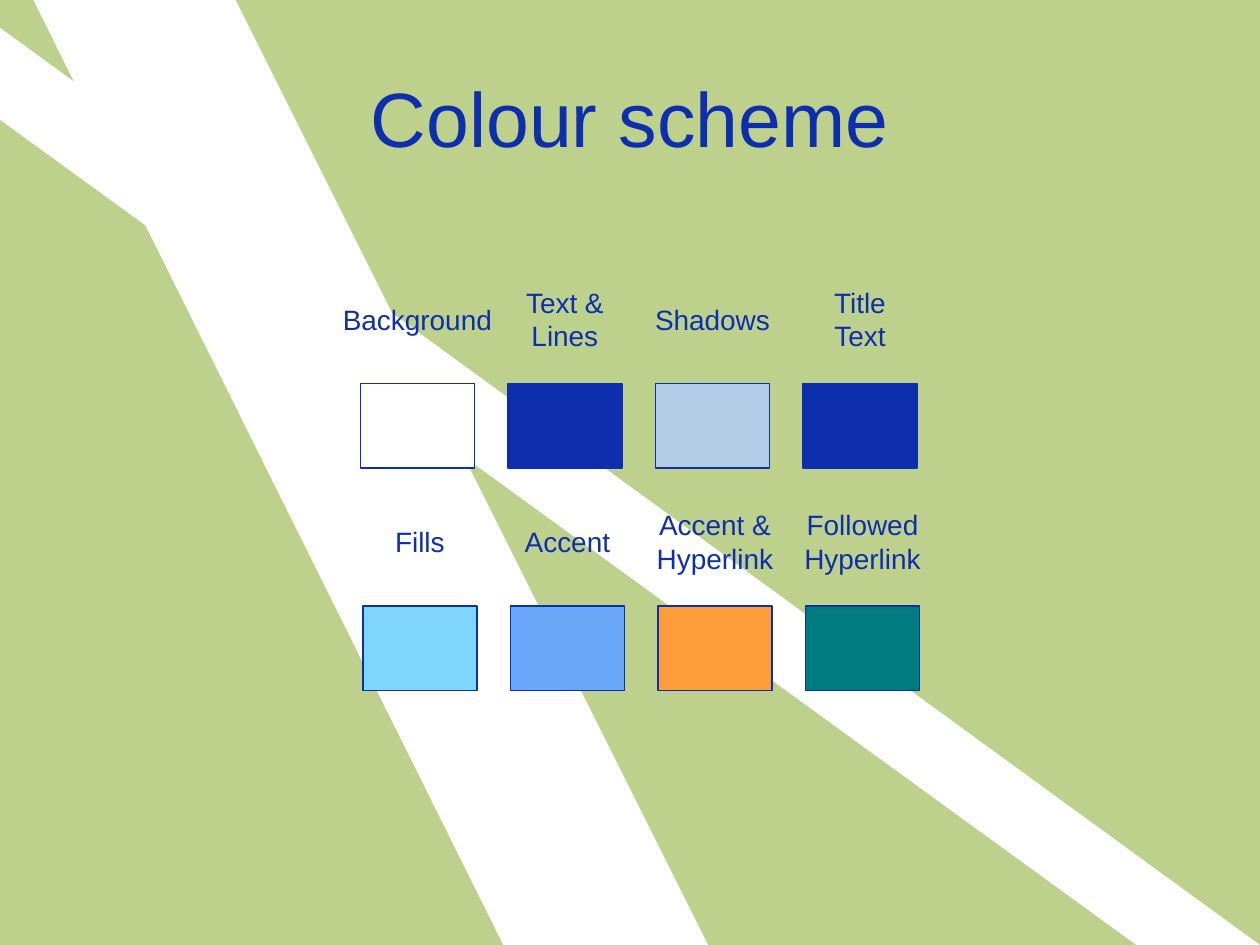
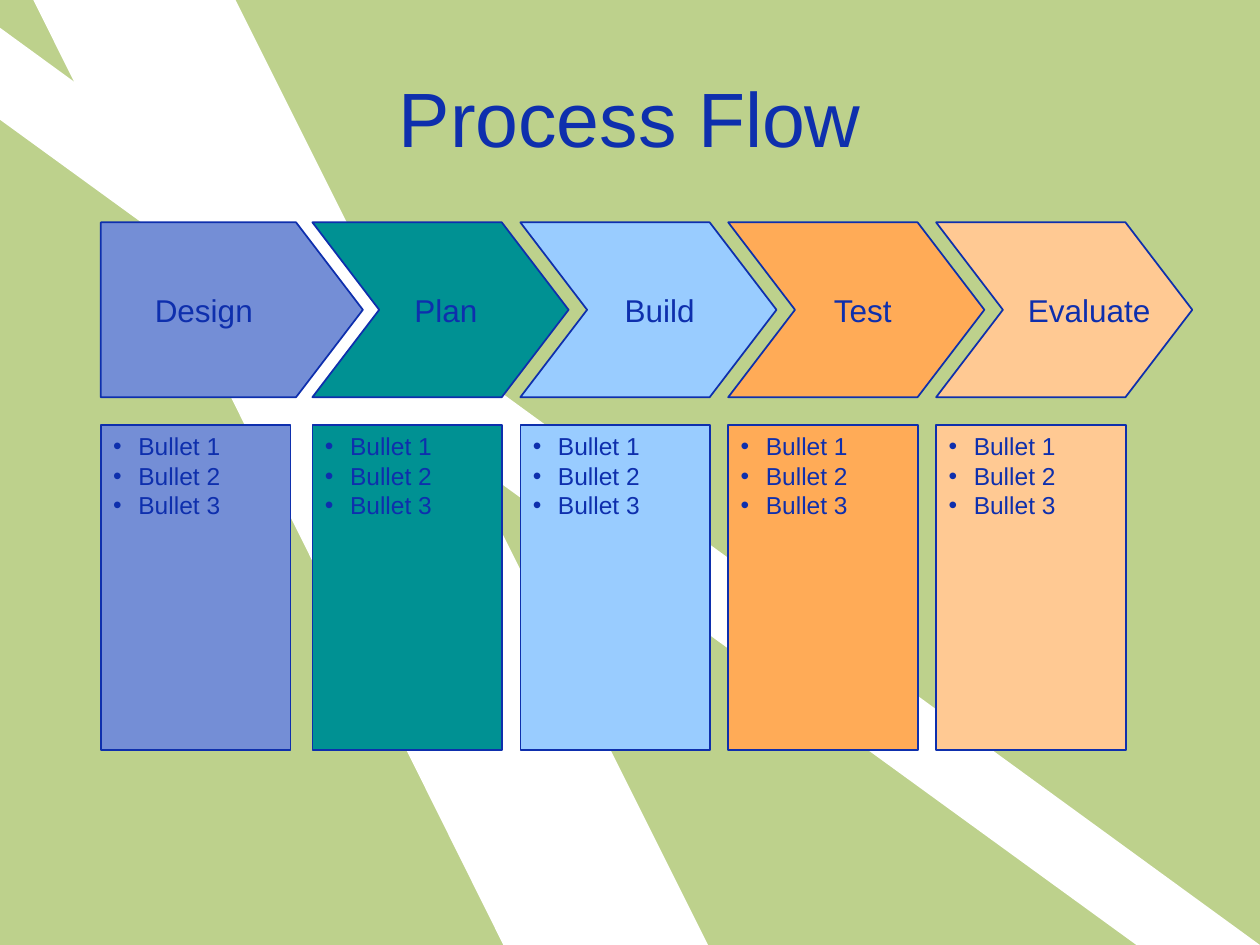
from dataclasses import dataclass
from typing import NamedTuple

from lxml.etree import SubElement
from pptx import Presentation
from pptx.dml.color import RGBColor
from pptx.enum.shapes import MSO_SHAPE as Preset
from pptx.enum.text import MSO_ANCHOR as Anchor, MSO_AUTO_SIZE as AutoSize, PP_ALIGN as Align
from pptx.oxml.ns import qn
from pptx.util import Inches, Pt

SLIDE_WIDTH, SLIDE_HEIGHT = Inches(10), Inches(7.5)
COLUMNS, ROWS = 100, 75
FONT = "Arial"
COLOURS = {
    "meadow": "BDD18C",
    "white": "FFFFFF",
    "ink": "0E2FAD",
    "shadow": "B3CCE6",
    "sky": "7FD7FC",
    "azure": "6BA7F8",
    "orange": "FF9D3B",
    "teal": "007B7E",
    "design": "748ED6",
    "plan": "009193",
    "build": "99CCFF",
    "test": "FFAB57",
    "evaluate": "FFC993",
}


class Box(NamedTuple):
    left: float
    top: float
    width: float
    height: float


class Swatch(NamedTuple):
    label: str
    colour: str
    label_width: float


@dataclass(frozen=True)
class Stage:
    label: str
    colour: str
    label_left: float
    label_width: float


TITLE_BOX = Box(5, 3, 90, 12.5)
BANDS = (
    ((2.65, 0), (18.7, 0), (56.2, 75), (39.95, 75)),
    ((0, 9.5), (0, 2.2), (100, 75), (90.2, 75)),
)

SWATCH_ROWS = (
    (28.6, 30.45, (
        Swatch("Background", "white", 14.1),
        Swatch("Text &\nLines", "ink", 8.6),
        Swatch("Shadows", "shadow", 11.4),
        Swatch("Title\vText", "ink", 6.5),
    )),
    (28.8, 48.1, (
        Swatch("Fills", "sky", 6.4),
        Swatch("Accent", "azure", 9.1),
        Swatch("Accent &\nHyperlink", "orange", 11.7),
        Swatch("Followed\nHyperlink", "teal", 11.7),
    )),
)
SWATCH_STEP, SWATCH_WIDTH, SWATCH_HEIGHT = 11.71, 9.05, 6.7
LABEL_RISE = 5.1

STAGES = (
    Stage("Design", "design", 11.3, 9.8),
    Stage("Plan", "plan", 31.9, 7),
    Stage("Build", "build", 48.6, 7.6),
    Stage("Test", "test", 65.2, 6.9),
    Stage("Evaluate", "evaluate", 80.6, 11.7),
)
STAGE_LEFT, STAGE_STEP, STAGE_WIDTH = 8.3, 16.5, 15.05
FIRST_STAGE_EXTRA = 0.3
ARROW_TOP, ARROW_HEIGHT, ARROW_POINT = 17.65, 13.88, 5.3
FIRST_ARROW_BODY, ARROW_BODY = 15.5, 15.03
DETAIL_TOP, DETAIL_HEIGHT = 33.75, 25.75
STAGE_LABEL_TOP, STAGE_LABEL_HEIGHT = 22.6, 4
BULLETS = "Bullet 1\nBullet 2\nBullet 3"


def col(count: float) -> int:
    return round(SLIDE_WIDTH * count / COLUMNS)


def row(count: float) -> int:
    return round(SLIDE_HEIGHT * count / ROWS)


def place(box: Box) -> tuple[int, int, int, int]:
    return col(box.left), row(box.top), col(box.width), row(box.height)


def colour(name: str) -> RGBColor:
    return RGBColor.from_string(COLOURS[name])


def paint(shape, fill: str, line_width: float = 0) -> None:
    shape.shadow.inherit = False
    shape.fill.solid()
    shape.fill.fore_color.rgb = colour(fill)
    if line_width:
        shape.line.color.rgb = colour("ink")
        shape.line.width = Pt(line_width)
    else:
        shape.line.fill.background()


def add_rectangle(slide, box: Box, fill: str, line_width: float = 0):
    rectangle = slide.shapes.add_shape(Preset.RECTANGLE, *place(box))
    paint(rectangle, fill, line_width)
    return rectangle


def add_outline(slide, points, fill: str, line_width: float = 0):
    corners = [(col(x), row(y)) for x, y in points]
    builder = slide.shapes.build_freeform(*corners[0])
    builder.add_line_segments(corners[1:], close=True)
    outline = builder.convert_to_shape()
    paint(outline, fill, line_width)
    return outline


def write(frame, text: str, *, size: float, align=Align.CENTER, anchor=Anchor.TOP,
          wrap: bool = True, grow: bool = False, bulleted: bool = False) -> None:
    frame.word_wrap = wrap
    frame.auto_size = AutoSize.SHAPE_TO_FIT_TEXT if grow else AutoSize.NONE
    frame.vertical_anchor = anchor
    for index, line in enumerate(text.split("\n")):
        paragraph = frame.add_paragraph() if index else frame.paragraphs[0]
        paragraph.text = line
        paragraph.alignment = align
        for run in paragraph.runs:
            run.font.name = FONT
            run.font.size = Pt(size)
            run.font.color.rgb = colour("ink")
        if bulleted:
            properties = paragraph._p.get_or_add_pPr()
            properties.set("marL", str(col(2)))
            properties.set("indent", str(-col(2)))
            SubElement(properties, qn("a:buFont"), typeface=FONT)
            SubElement(properties, qn("a:buChar"), char="•")


def add_label(slide, box: Box, text: str, **text_format) -> None:
    label = slide.shapes.add_textbox(*place(box))
    write(label.text_frame, text, wrap=False, grow=True, **text_format)


def add_titled_slide(deck, layout, title: str):
    slide = deck.slides.add_slide(layout)
    heading = slide.shapes.title
    heading.left, heading.top, heading.width, heading.height = place(TITLE_BOX)
    write(heading.text_frame, title, size=44, anchor=Anchor.MIDDLE)
    return slide


def move_backdrop_to_layout(slide, layout) -> None:
    backdrop = [add_rectangle(slide, Box(0, 0, COLUMNS, ROWS), "meadow")]
    backdrop += [add_outline(slide, band, "white") for band in BANDS]
    tree = layout.element.cSld.spTree
    for depth, part in enumerate(backdrop, start=2):
        tree.insert(depth, part.element)


def draw_colour_scheme(slide) -> None:
    for left, top, swatches in SWATCH_ROWS:
        for index, swatch in enumerate(swatches):
            swatch_left = left + index * SWATCH_STEP
            add_rectangle(slide, Box(swatch_left, top, SWATCH_WIDTH, SWATCH_HEIGHT),
                          swatch.colour, 0.75)
            height = 3.7 if swatch.label.isalpha() else 6.4
            label_left = swatch_left + (SWATCH_WIDTH - swatch.label_width) / 2
            label_top = top - LABEL_RISE - height / 2
            add_label(slide, Box(label_left, label_top, swatch.label_width, height),
                      swatch.label, size=16)


def arrow_points(left: float, shoulder: float, notched: bool):
    middle, bottom = ARROW_TOP + ARROW_HEIGHT / 2, ARROW_TOP + ARROW_HEIGHT
    points = [(left, ARROW_TOP), (shoulder, ARROW_TOP), (shoulder + ARROW_POINT, middle),
              (shoulder, bottom), (left, bottom)]
    return points + [(left + ARROW_POINT, middle)] if notched else points


def draw_process_flow(slide) -> None:
    for index, stage in enumerate(STAGES):
        left = STAGE_LEFT + index * STAGE_STEP - (0 if index else FIRST_STAGE_EXTRA)
        shoulder = left + (ARROW_BODY if index else FIRST_ARROW_BODY)
        detail = add_rectangle(slide, Box(left, DETAIL_TOP, STAGE_WIDTH, DETAIL_HEIGHT),
                               stage.colour, 1)
        write(detail.text_frame, BULLETS, size=14, align=Align.LEFT, bulleted=True)
        add_outline(slide, arrow_points(left, shoulder, index > 0), stage.colour, 1)
        add_label(slide, Box(stage.label_left, STAGE_LABEL_TOP, stage.label_width,
                             STAGE_LABEL_HEIGHT), stage.label, size=18, align=Align.LEFT)


def main() -> None:
    deck = Presentation()
    deck.slide_width, deck.slide_height = SLIDE_WIDTH, SLIDE_HEIGHT
    layout = deck.slide_layouts.get_by_name("Title Only")
    colour_slide = add_titled_slide(deck, layout, "Colour scheme")
    move_backdrop_to_layout(colour_slide, layout)
    draw_colour_scheme(colour_slide)
    draw_process_flow(add_titled_slide(deck, layout, "Process Flow"))
    deck.save("out.pptx")


if __name__ == "__main__":
    main()
